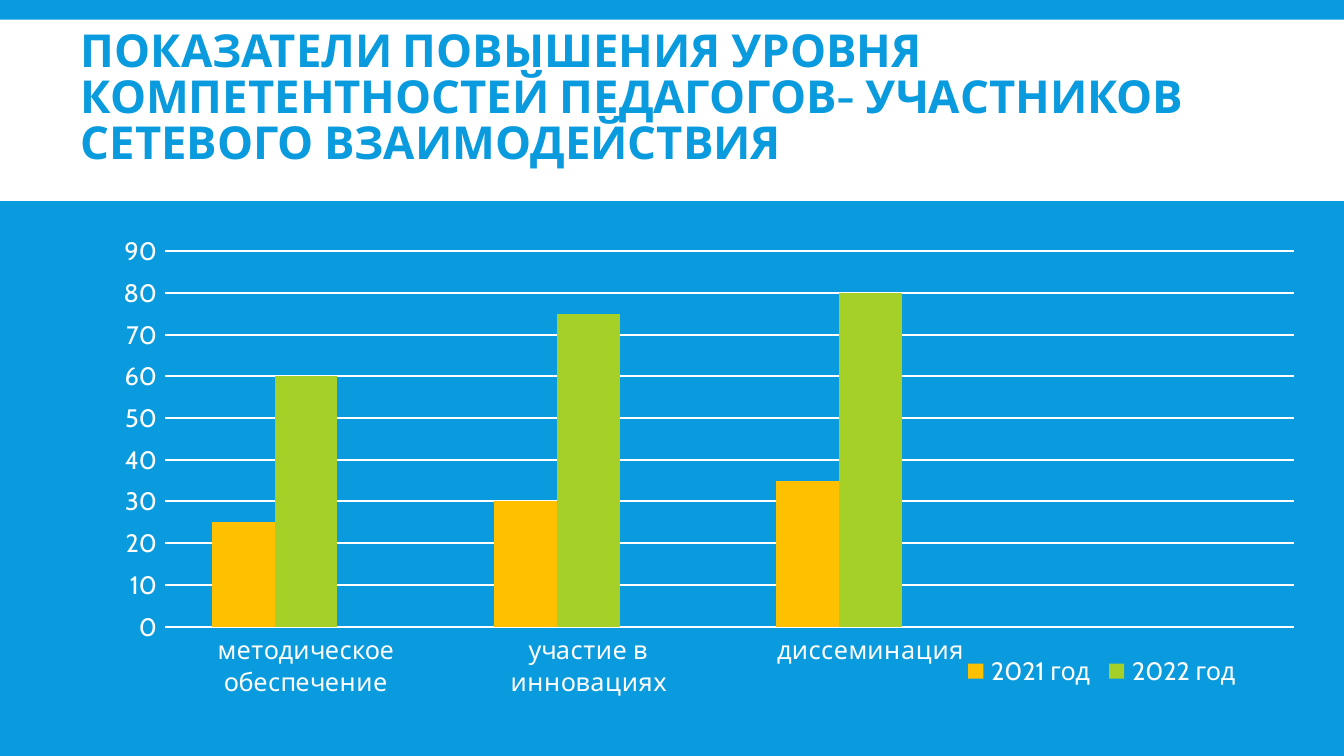
from pptx import Presentation
from pptx.chart.data import CategoryChartData
from pptx.dml.color import RGBColor
from pptx.enum.chart import XL_CHART_TYPE, XL_LEGEND_POSITION, XL_TICK_MARK
from pptx.enum.shapes import MSO_SHAPE
from pptx.enum.text import MSO_ANCHOR, PP_ALIGN
from pptx.oxml import parse_xml
from pptx.oxml.ns import nsdecls
from pptx.util import Pt

COLUMNS = XL_CHART_TYPE.COLUMN_CLUSTERED
LEGEND_BOTTOM = XL_LEGEND_POSITION.BOTTOM
NO_TICK = XL_TICK_MARK.NONE
RECTANGLE = MSO_SHAPE.RECTANGLE
MIDDLE = MSO_ANCHOR.MIDDLE
LEFT = PP_ALIGN.LEFT

COLORS = {
    "blue": "099BDD",
    "white": "FFFFFF",
    "amber": "FFC000",
    "lime": "A5D028",
    "green": "08CC78",
}

TITLE = ("ПОКАЗАТЕЛИ ПОВЫШЕНИЯ УРОВНЯ КОМПЕТЕНТНОСТЕЙ "
         "ПЕДАГОГОВ- УЧАСТНИКОВ СЕТЕВОГО ВЗАИМОДЕЙСТВИЯ")
# The last slot and the third series are empty and only reserve room.
INDICATORS = ["методическое обеспечение", "участие в инновациях", "диссеминация", ""]
YEARS = [
    ("2021 год", [25, 30, 35, None], "amber"),
    ("2022 год", [60, 75, 80, None], "lime"),
    ("Series 3", [None] * 4, "green"),
]


def color(name):
    return RGBColor.from_string(COLORS[name])


def manual_layout(x, y, w, h, inner=False):
    """Return a c:layout element; lengths are fractions of the chart."""
    target = '<c:layoutTarget val="inner"/>' if inner else ""
    return parse_xml(
        f'<c:layout {nsdecls("c")}><c:manualLayout>{target}'
        '<c:xMode val="edge"/><c:yMode val="edge"/>'
        f'<c:x val="{x}"/><c:y val="{y}"/><c:w val="{w}"/><c:h val="{h}"/>'
        '</c:manualLayout></c:layout>')


def drop_layout(element):
    for layout in element.xpath("c:layout"):
        element.remove(layout)


class SlideBuilder:
    font_name = "Cabin"

    def __init__(self, presentation):
        self.slide = presentation.slides.add_slide(presentation.slide_layouts[6])
        background = self.slide.background.fill
        background.solid()
        background.fore_color.rgb = color("blue")

    def style(self, font, size, tint, bold=False):
        font.name = self.font_name
        font.size = Pt(size)
        font.bold = bold
        font.color.rgb = color(tint)

    def band(self, x, y, w, h, tint):
        band = self.slide.shapes.add_shape(RECTANGLE, Pt(x), Pt(y), Pt(w), Pt(h))
        band.shadow.inherit = False
        band.fill.solid()
        band.fill.fore_color.rgb = color(tint)
        band.line.fill.background()

    def title(self, text, x, y, w, h, size, tint):
        frame = self.slide.shapes.add_textbox(Pt(x), Pt(y), Pt(w), Pt(h)).text_frame
        frame.word_wrap = True
        frame.vertical_anchor = MIDDLE
        frame.margin_left = frame.margin_right = Pt(3.6)
        frame.margin_top = Pt(1.44)
        frame.margin_bottom = Pt(18.2)  # lifts the heading by half a line
        heading = frame.paragraphs[0]
        heading.text = text
        heading.alignment = LEFT
        heading.line_spacing = 0.85
        self.style(heading.font, size, tint, bold=True)

    def column_chart(self, categories, series, x, y, w, h):
        data = CategoryChartData()
        data.categories = categories
        for name, values, _ in series:
            data.add_series(name, values)
        chart = self.slide.shapes.add_chart(
            COLUMNS, Pt(x), Pt(y), Pt(w), Pt(h), data).chart
        chart.has_title = False
        self.style(chart.font, 10, "white")

        plot = chart.plots[0]
        plot.gap_width = 150
        plot.overlap = 0
        plot.vary_by_categories = False
        for columns, (_, _, tint) in zip(plot.series, series):
            columns.format.fill.solid()
            columns.format.fill.fore_color.rgb = color(tint)

        for axis in (chart.category_axis, chart.value_axis):
            axis.major_tick_mark = axis.minor_tick_mark = NO_TICK
            axis.format.line.fill.background()
            self.style(axis.tick_labels.font, 9, "white")
        scale = chart.value_axis
        scale.minimum_scale, scale.maximum_scale, scale.major_unit = 0, 90, 10
        scale.has_major_gridlines = True
        grid = scale.major_gridlines.format.line
        grid.color.rgb = color("white")
        grid.width = Pt(0.75)

        plot_area = chart.element.xpath("c:chart/c:plotArea")[0]
        drop_layout(plot_area)
        plot_area.insert(0, manual_layout(0.05, 0.06, 0.94, 0.76, inner=True))
        self.legend(chart, hidden=2)

    def legend(self, chart, hidden):
        """Add the legend at the lower right without the entry numbered hidden."""
        chart.has_legend = True
        legend = chart.legend
        legend.position = LEGEND_BOTTOM
        legend.include_in_layout = False
        self.style(legend.font, 9, "white")
        element = chart.element.xpath("c:chart/c:legend")[0]
        drop_layout(element)
        position = element.xpath("c:legendPos")
        if not position:
            position = [parse_xml(f'<c:legendPos {nsdecls("c")} val="b"/>')]
            element.insert(0, position[0])
        position[0].addnext(manual_layout(0.71, 0.87, 0.24, 0.08))
        position[0].addnext(parse_xml(
            f'<c:legendEntry {nsdecls("c")}><c:idx val="{hidden}"/>'
            '<c:delete val="1"/></c:legendEntry>'))


def main():
    presentation = Presentation()
    presentation.slide_width, presentation.slide_height = Pt(480), Pt(270)
    builder = SlideBuilder(presentation)
    builder.band(0, 7, 480, 64.8, "white")
    builder.title(TITLE, 25.2, 14.4, 459.4, 59, 16.2, "blue")
    builder.column_chart(INDICATORS, YEARS, 37.4, 79.2, 429.1, 176.4)
    presentation.save("out.pptx")


if __name__ == "__main__":
    main()
